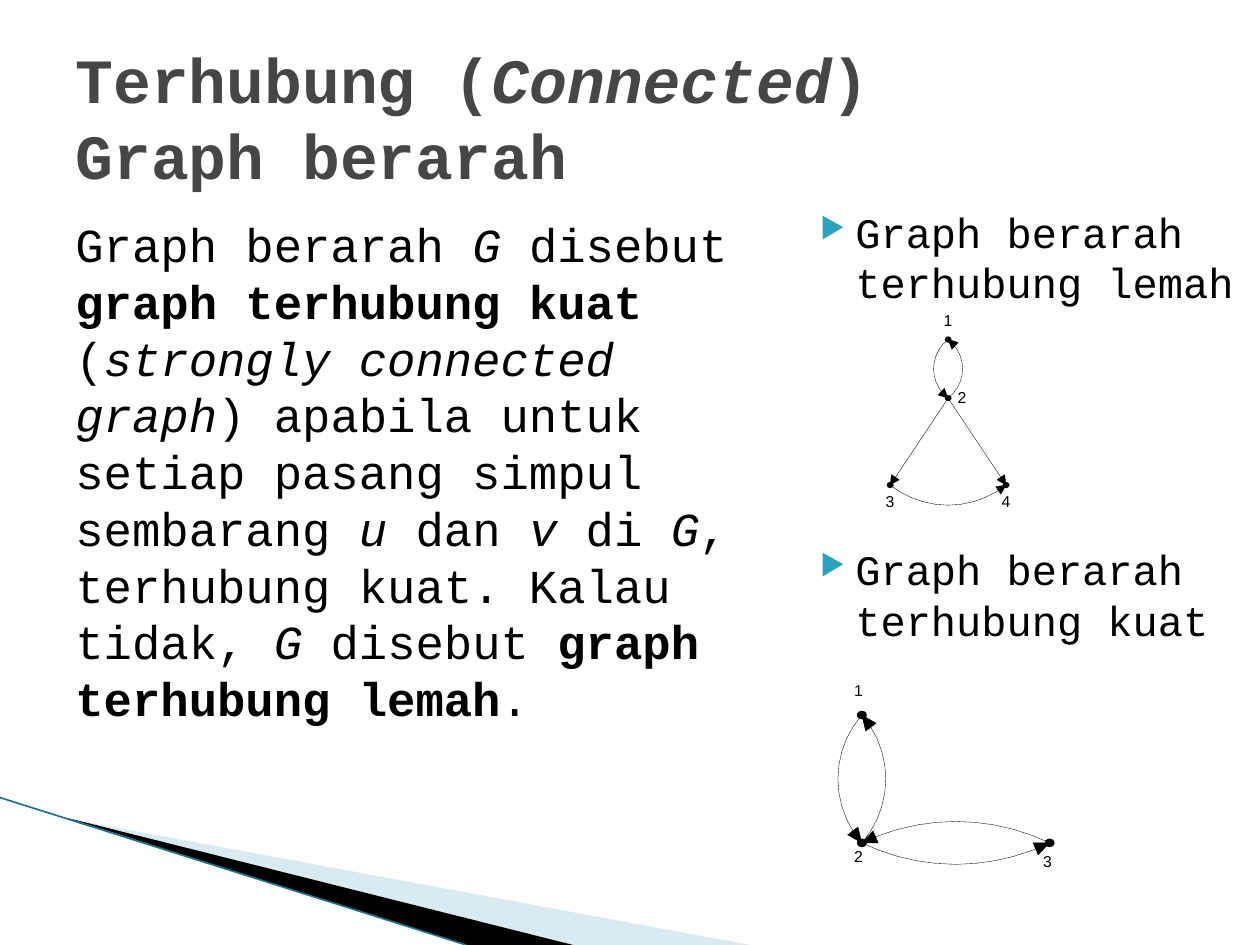
from dataclasses import dataclass
from math import atan, cos, hypot, sin

from lxml.etree import SubElement
from pptx import Presentation
from pptx.dml.color import RGBColor
from pptx.enum.shapes import MSO_CONNECTOR, MSO_SHAPE
from pptx.enum.text import MSO_ANCHOR, MSO_AUTO_SIZE, PP_ALIGN
from pptx.oxml.ns import qn
from pptx.util import Inches, Pt


@dataclass(frozen=True)
class Theme:
    """Colours, fonts and type sizes of the slide."""
    ink: str = "000000"
    heading: str = "464646"
    bullet: str = "2DA2BF"
    ribbon: str = "A0CBDC"
    edge: str = "1F7388"
    text_font: str = "Courier New"
    label_font: str = "Arial"
    title_size: float = 36
    body_size: float = 27
    list_size: float = 24
    label_size: float = 9
    hairline: float = 0.2


@dataclass(frozen=True)
class Graph:
    """Directed graph: node name to (column, row, label column, label row)."""
    nodes: dict
    edges: tuple
    dot: tuple
    head: tuple


THEME = Theme()
COLUMNS, ROWS = 100, 75
ARC_STEPS = 10

TITLE = [("Terhubung (", "b"), ("Connected", "bi"), (")", "b"), ("\n", ""),
         ("Graph berarah", "b")]
DEFINITION = [
    ("Graph berarah ", ""), ("G ", "i"), ("disebut ", ""),
    ("graph terhubung kuat", "b"), (" (", ""),
    ("strongly connected graph", "i"),
    (") apabila untuk setiap pasang simpul sembarang ", ""),
    ("u ", "i"), ("dan ", ""), ("v", "i"), (" di ", ""), ("G", "i"),
    (", terhubung kuat. Kalau tidak, ", ""), ("G ", "i"), ("disebut ", ""),
    ("graph terhubung lemah", "b"), (".", ""),
]
EXAMPLES = [("Graph berarah terhubung lemah", 0),
            ("Graph berarah terhubung kuat", 135)]

WEAK = Graph(
    nodes={"1": (75.25, 26.95, 74.9, 24.7), "2": (75.25, 31.6, 76, 30.8),
           "3": (70.65, 38.5, 70.3, 39), "4": (79.85, 38.5, 79.5, 39)},
    edges=(("1", "2", 1.15), ("2", "1", 1.15), ("2", "3", 0),
           ("2", "4", 0), ("3", "4", 1.6)),
    dot=(0.5, 0.45), head=(0.75, 0.37))
STRONG = Graph(
    nodes={"1": (68.4, 56.75, 67.8, 54), "2": (68.4, 66.9, 67.8, 67.2),
           "3": (83.3, 66.9, 82.8, 67.6)},
    edges=(("1", "2", 1.9), ("2", "1", 1.9), ("2", "3", 1.7),
           ("3", "2", 1.7)),
    dot=(0.75, 0.65), head=(1.2, 0.52))


def cells(*values):
    """Turn grid columns or rows into slide lengths."""
    return [Inches(value * 10 / COLUMNS) for value in values]


def color(code):
    """Read a hexadecimal colour."""
    return RGBColor.from_string(code)


def add_run(para, text, style, font, size, shade):
    """Add one formatted run; style holds b and i flags."""
    span = para.add_run()
    span.text = text
    span.font.name = font
    span.font.size = Pt(size)
    span.font.bold = "b" in style
    span.font.italic = "i" in style
    span.font.color.rgb = color(shade)


def add_runs(para, runs, size, shade):
    """Add body runs, with a line break for each newline."""
    for text, style in runs:
        if text == "\n":
            para.add_line_break()
        else:
            add_run(para, text, style, THEME.text_font, size, shade)


def add_box(shapes, *place):
    """Add a wrapping text box at a grid place."""
    box = shapes.add_textbox(*cells(*place))
    box.text_frame.word_wrap = True
    return box.text_frame


def add_bullet(para):
    """Give a paragraph a hanging coloured triangle bullet."""
    props = para._p.get_or_add_pPr()
    props.set("marL", str(Inches(0.4)))
    props.set("indent", str(Inches(-0.28)))
    shade = SubElement(props, qn("a:buClr"))
    SubElement(shade, qn("a:srgbClr"), val=THEME.bullet)
    SubElement(props, qn("a:buSzPct"), val="68000")
    SubElement(props, qn("a:buChar"), char="▶")


def add_line(shapes, start, end, shade, width):
    """Add a straight connector without a shadow."""
    line = shapes.add_connector(MSO_CONNECTOR.STRAIGHT, *cells(*start, *end))
    line.line.color.rgb = color(shade)
    line.line.width = Pt(width)
    SubElement(line._element.spPr, qn("a:effectLst"))


def add_outline(shapes, points, fill=None, stroke=None):
    """Add a filled polygon or an open curve through grid points."""
    first, *rest = [cells(*point) for point in points]
    builder = shapes.build_freeform(*first)
    builder.add_line_segments(rest, close=fill is not None)
    shape = builder.convert_to_shape()
    shape.shadow.inherit = False
    if fill:
        shape.fill.solid()
        shape.fill.fore_color.rgb = color(fill)
    else:
        shape.fill.background()
    if stroke:
        shape.line.color.rgb = color(stroke)
        shape.line.width = Pt(THEME.hairline)
    else:
        shape.line.fill.background()
    return shape


def arc_points(start, end, bulge):
    """Sample a circular arc that rises by bulge beside its chord."""
    (x, y), chord = start, hypot(end[0] - start[0], end[1] - start[1])
    across, down = (end[0] - x) / chord, (end[1] - y) / chord
    half = 2 * atan(2 * bulge / chord)
    radius = chord / (2 * sin(half))
    points = []
    for step in range(ARC_STEPS + 1):
        angle = half * (2 * step / ARC_STEPS - 1)
        along = chord / 2 + radius * sin(angle)
        off = radius * (cos(angle) - cos(half))
        points.append((x + along * across - off * down,
                       y + along * down + off * across))
    return points


def add_head(shapes, before, tip, size):
    """Add a solid arrowhead pointing from before to tip."""
    length, half = size
    reach = hypot(tip[0] - before[0], tip[1] - before[1])
    across, down = (tip[0] - before[0]) / reach, (tip[1] - before[1]) / reach
    base = tip[0] - length * across, tip[1] - length * down
    corners = [(base[0] - side * down, base[1] + side * across)
               for side in (half, -half)]
    add_outline(shapes, [tip, *corners], THEME.ink, THEME.ink)


def add_node(shapes, name, place, dot):
    """Add a node dot and its number."""
    x, y, label_x, label_y = place
    width, height = dot
    oval = shapes.add_shape(MSO_SHAPE.OVAL, *cells(
        x - width / 2, y - height / 2, width, height))
    oval.shadow.inherit = False
    oval.fill.solid()
    oval.fill.fore_color.rgb = color(THEME.ink)
    oval.line.color.rgb = color(THEME.ink)
    oval.line.width = Pt(THEME.hairline)
    frame = add_box(shapes, label_x, label_y, 0.7, 1.5)
    frame.word_wrap = False
    frame.margin_left = frame.margin_right = 0
    frame.margin_top = frame.margin_bottom = 0
    add_run(frame.paragraphs[0], name, "", THEME.label_font,
            THEME.label_size, THEME.ink)


def add_graph(page, graph):
    """Draw a directed graph as one group."""
    shapes = page.shapes.add_group_shape().shapes
    for source, target, bulge in graph.edges:
        start, end = graph.nodes[source][:2], graph.nodes[target][:2]
        if bulge:
            points = arc_points(start, end, bulge)
            add_outline(shapes, points, stroke=THEME.ink)
            add_head(shapes, points[-2], end, graph.head)
        else:
            add_line(shapes, start, end, THEME.ink, THEME.hairline)
            add_head(shapes, start, end, graph.head)
    for name, place in graph.nodes.items():
        add_node(shapes, name, place, graph.dot)


def add_ribbon(page):
    """Draw the folded ribbon in the lower left corner."""
    pale = add_outline(page.shapes, [(5.5, 65), (59.5, 75), (45.6, 75)],
                       THEME.ribbon)
    shade = pale._element.spPr.find(qn("a:solidFill"))[0]
    SubElement(shade, qn("a:alpha"), val="40000")
    add_outline(page.shapes, [(5.3, 64.9), (45.5, 75), (37, 75)], THEME.ink)
    add_line(page.shapes, (0, 63.3), (37, 75), THEME.edge, 0.95)


def add_title(page):
    """Place and fill the title."""
    title = page.shapes.title
    title.left, title.top, title.width, title.height = cells(5, 3, 90, 12.5)
    frame = title.text_frame
    frame.auto_size = MSO_AUTO_SIZE.NONE
    frame.vertical_anchor = MSO_ANCHOR.MIDDLE
    para = frame.paragraphs[0]
    para.alignment = PP_ALIGN.LEFT
    add_runs(para, TITLE, THEME.title_size, THEME.heading)


def add_examples(page):
    """List the two kinds of graph, leaving room for each drawing."""
    frame = add_box(page.shapes, 62.9, 15.9, 37.1, 48.3)
    for index, (text, gap) in enumerate(EXAMPLES):
        para = frame.add_paragraph() if index else frame.paragraphs[0]
        add_bullet(para)
        if gap:
            para.space_before = Pt(gap)
        add_runs(para, [(text, "")], THEME.list_size, THEME.ink)


def main():
    """Build and save the slide."""
    deck = Presentation()
    deck.slide_width, deck.slide_height = cells(COLUMNS, ROWS)
    page = deck.slides.add_slide(deck.slide_layouts[5])
    add_ribbon(page)
    add_title(page)
    definition = add_box(page.shapes, 5, 16.6, 55.2, 49.1)
    add_runs(definition.paragraphs[0], DEFINITION, THEME.body_size, THEME.ink)
    add_examples(page)
    add_graph(page, WEAK)
    add_graph(page, STRONG)
    deck.save("out.pptx")


if __name__ == "__main__":
    main()
